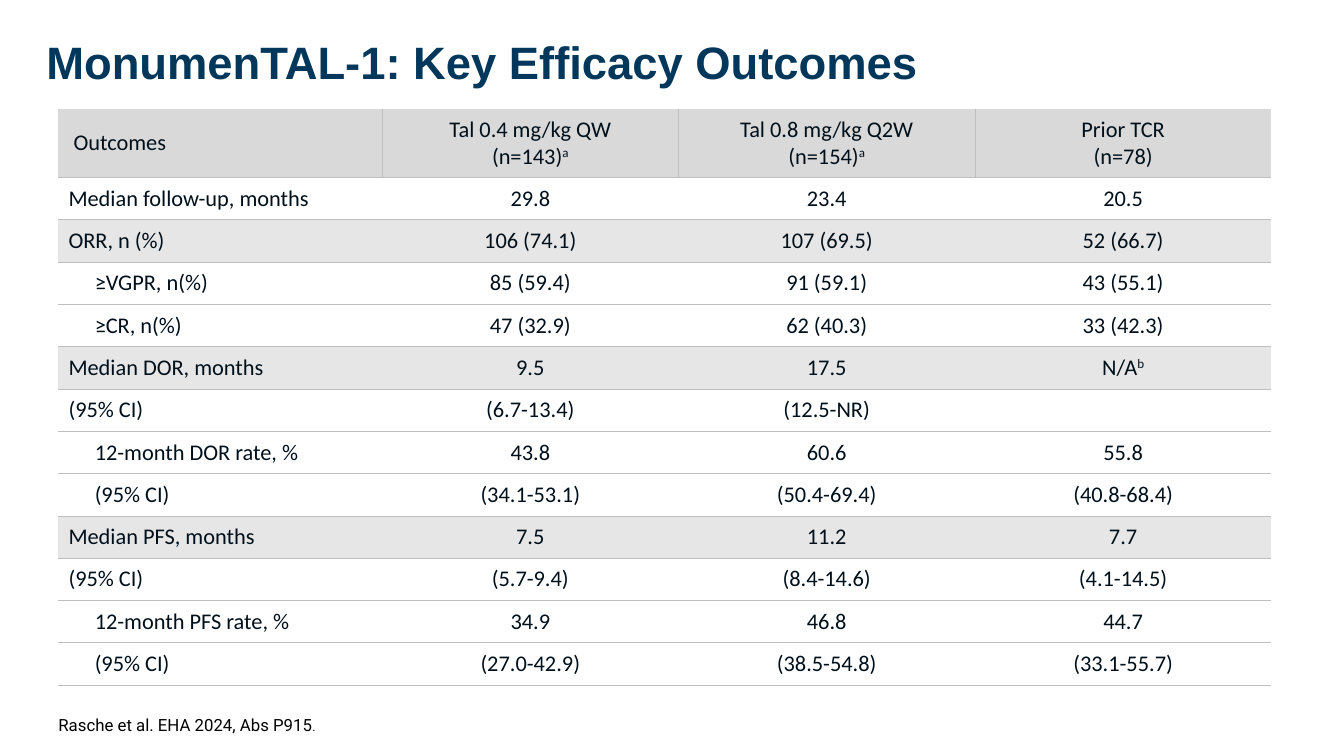
import pptx
import pptx.dml.color
import pptx.enum.text
import pptx.oxml
import pptx.oxml.ns
import pptx.util

COLORS = {
    "title": "00375B",
    "cell": "00101B",
    "source": "000000",
    "header": "D9D9D9",
    "group": "E7E6E6",
    "rule": "BFBFBF",
}
PAGE_WIDTH, PAGE_HEIGHT = pptx.util.Inches(13.33), pptx.util.Inches(7.5)
TABLE_LEFT, TABLE_TOP = 0.58 / 13.33, 1.08 / 7.5
COLUMN_SHARES = [3.21 / 13.33] + [2.94 / 13.33] * 3
ROW_SHARES = [0.68 / 7.5] + [0.42 / 7.5] * 12
GROUP_ROWS = {2, 5, 9}
# "^" raises the letter after it, ">" indents a row label.
OUTCOMES = [
    (" Outcomes", "Tal 0.4 mg/kg QW\n(n=143)^a", "Tal 0.8 mg/kg Q2W\n(n=154)^a", "Prior TCR\n(n=78)"),
    ("Median follow-up, months", "29.8", "23.4", "20.5"),
    ("ORR, n (%)", "106 (74.1)", "107 (69.5)", "52 (66.7)"),
    (">≥VGPR, n(%)", "85 (59.4)", "91 (59.1)", "43 (55.1)"),
    (">≥CR, n(%)", "47 (32.9)", "62 (40.3)", "33 (42.3)"),
    ("Median DOR, months", "9.5", "17.5", "N/A^b"),
    ("(95% CI)", "(6.7-13.4)", "(12.5-NR)", ""),
    (">12-month DOR rate, %", "43.8", "60.6", "55.8"),
    (">(95% CI)", "(34.1-53.1)", "(50.4-69.4)", "(40.8-68.4)"),
    ("Median PFS, months", "7.5", "11.2", "7.7"),
    ("(95% CI)", "(5.7-9.4)", "(8.4-14.6)", "(4.1-14.5)"),
    (">12-month PFS rate, %", "34.9", "46.8", "44.7"),
    (">(95% CI)", "(27.0-42.9)", "(38.5-54.8)", "(33.1-55.7)"),
]


def across(share):
    return pptx.util.Emu(round(PAGE_WIDTH * share))


def down(share):
    return pptx.util.Emu(round(PAGE_HEIGHT * share))


def color(name):
    return pptx.dml.color.RGBColor.from_string(COLORS[name])


def style_font(font, name, size, color_name, bold=False):
    font.name = name
    font.size = pptx.util.Pt(size)
    font.bold = bold
    font.color.rgb = color(color_name)


def add_text_box(page, left, top, width, height, inset=0):
    """Add a wrapped, vertically centred box and return its first paragraph."""
    box = page.shapes.add_textbox(across(left), down(top), across(width), down(height))
    frame = box.text_frame
    frame.word_wrap = True
    frame.vertical_anchor = pptx.enum.text.MSO_ANCHOR.MIDDLE
    frame.margin_left = frame.margin_right = pptx.util.Inches(inset)
    frame.margin_top = frame.margin_bottom = pptx.util.Inches(inset)
    return frame.paragraphs[0]


def set_border(cell, side, visible):
    properties = cell._tc.get_or_add_tcPr()
    namespace = pptx.oxml.ns.nsdecls("a")
    if visible:
        paint = f'<a:solidFill><a:srgbClr val="{COLORS["rule"]}"/></a:solidFill>'
    else:
        paint = "<a:noFill/>"
    width = pptx.util.Pt(0.5)
    properties.append(pptx.oxml.parse_xml(f'<a:ln{side} {namespace} w="{width}">{paint}</a:ln{side}>'))


def write_cell(cell, text, centered):
    cell.vertical_anchor = pptx.enum.text.MSO_ANCHOR.MIDDLE
    para = cell.text_frame.paragraphs[0]
    if centered:
        para.alignment = pptx.enum.text.PP_ALIGN.CENTER
    if text.startswith(">"):
        para._p.get_or_add_pPr().set("marL", str(pptx.util.Inches(0.26)))
        text = text[1:]
    style_font(para.font, "Calibri", 16, "cell")
    body, _, raised = text.partition("^")
    for index, line in enumerate(body.split("\n")):
        if index:
            para.add_line_break()
        if line:
            para.add_run().text = line
    if raised:
        span = para.add_run()
        span.text = raised
        span._r.get_or_add_rPr().set("baseline", "30000")


def fill_cell(cell, row):
    if row == 0 or row in GROUP_ROWS:
        cell.fill.solid()
        cell.fill.fore_color.rgb = color("group" if row else "header")
    else:
        cell.fill.background()


def add_outcomes_table(page):
    frame = page.shapes.add_table(
        len(ROW_SHARES), len(COLUMN_SHARES), across(TABLE_LEFT), down(TABLE_TOP),
        across(sum(COLUMN_SHARES)), down(sum(ROW_SHARES)))
    table = frame.table
    table.first_row = table.horz_banding = False
    for column, share in zip(table.columns, COLUMN_SHARES):
        column.width = across(share)
    for row, share in zip(table.rows, ROW_SHARES):
        row.height = down(share)
    last = len(COLUMN_SHARES) - 1
    for row, texts in enumerate(OUTCOMES):
        for column, text in enumerate(texts):
            cell = table.cell(row, column)
            write_cell(cell, text, centered=column > 0)
            set_border(cell, "L", row == 0 and column > 0)
            set_border(cell, "R", row == 0 and column < last)
            set_border(cell, "T", row > 0)
            set_border(cell, "B", True)
            fill_cell(cell, row)


def add_title(page):
    para = add_text_box(page, 0.33 / 13.33, 0.41 / 7.5, 10.23 / 13.33, 0.47 / 7.5, inset=0.13)
    para.line_spacing = 0.9
    style_font(para.font, "Arial", 32.4, "title", bold=True)
    para.add_run().text = "MonumenTAL-1: Key Efficacy Outcomes"


def add_source(page):
    para = add_text_box(page, TABLE_LEFT, 7.09 / 7.5, 11.23 / 13.33, 0.2 / 7.5)
    for text, size in (("Rasche et al. EHA 2024, Abs P915", 12), (".", 9)):
        span = para.add_run()
        span.text = text
        style_font(span.font, "Roboto", size, "source")


def main():
    deck = pptx.Presentation()
    deck.slide_width, deck.slide_height = PAGE_WIDTH, PAGE_HEIGHT
    page = deck.slides.add_slide(deck.slide_layouts[6])
    add_outcomes_table(page)
    add_title(page)
    add_source(page)
    deck.save("out.pptx")


if __name__ == "__main__":
    main()
